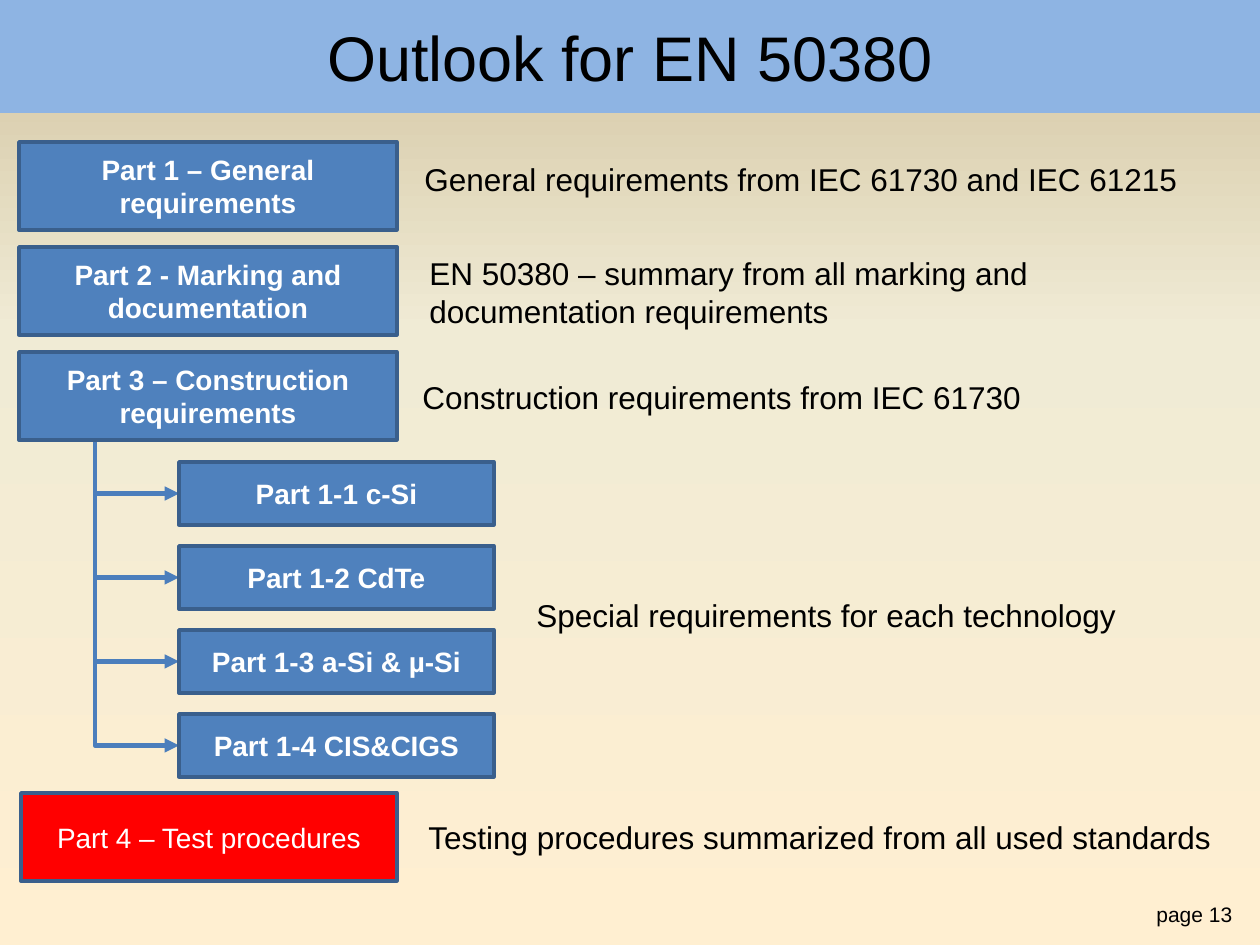
from copy import deepcopy
from dataclasses import dataclass

from lxml.etree import SubElement
from pptx import Presentation
from pptx.dml.color import RGBColor
from pptx.enum.shapes import MSO_CONNECTOR, MSO_SHAPE
from pptx.enum.text import MSO_ANCHOR, MSO_AUTO_SIZE, PP_ALIGN
from pptx.oxml.ns import qn
from pptx.util import Emu, Pt


@dataclass(frozen=True)
class Theme:
    font: str = "Arial"
    text: str = "000000"
    box_text: str = "FFFFFF"
    banner: str = "8EB4E3"
    box_fill: str = "4F81BD"
    test_fill: str = "FF0000"
    outline: str = "3A5F8C"
    branch: str = "4B7EBC"
    background: tuple = ((0, "FFEFD1"), (0.65, "F0EBD5"), (1, "D1C39F"))
    title_size: int = 36
    note_size: int = 18
    box_size: int = 16
    page_size: int = 12


theme = Theme()
PX = 914400 / 126


def px(*lengths):
    return [Emu(round(length * PX)) for length in lengths]


def write(shape, text, size, color, bold=False, align=PP_ALIGN.LEFT,
          anchor=MSO_ANCHOR.TOP, wrap=True, fit=MSO_AUTO_SIZE.NONE):
    """Put one formatted paragraph into a shape."""
    frame = shape.text_frame
    frame.text = text
    for name, value in {"word_wrap": wrap, "auto_size": fit,
                        "vertical_anchor": anchor}.items():
        setattr(frame, name, value)
    paragraph = frame.paragraphs[0]
    paragraph.alignment = align
    font = paragraph.runs[0].font
    for name, value in {"name": theme.font, "size": Pt(size), "bold": bold}.items():
        setattr(font, name, value)
    font.color.rgb = RGBColor.from_string(color)


prs = Presentation()
prs.slide_width, prs.slide_height = px(1260, 945)
slide = prs.slides.add_slide(prs.slide_layouts[5])
shapes = slide.shapes

# Background, running from the bottom up
backdrop = slide.background.fill
backdrop.gradient()
backdrop.gradient_angle = 90
stop_list = next(slide.element.iter(qn("a:gsLst")))
stop_list.append(deepcopy(stop_list[-1]))
for stop, (position, color) in zip(backdrop.gradient_stops, theme.background):
    stop.position = position
    stop.color.rgb = RGBColor.from_string(color)

# Title banner
title = shapes.title
title.left, title.top, title.width, title.height = px(0, 0, 1260, 113)
title.fill.solid()
title.fill.fore_color.rgb = RGBColor.from_string(theme.banner)
write(title, "Outlook for EN 50380", theme.title_size, theme.text,
      align=PP_ALIGN.CENTER, anchor=MSO_ANCHOR.MIDDLE)

# Geometry of the parts and of the technologies below part 3
part_left, part_top, part_width, part_height, part_pitch = 19, 142, 378, 88, 105
tech_left, tech_top, tech_width, tech_height, tech_pitch = 179, 462, 315, 63, 84
trunk_x, trunk_top = 95, 437

technologies = ["Part 1-1 c-Si", "Part 1-2 CdTe", "Part 1-3 a-Si & µ-Si",
                "Part 1-4 CIS&CIGS"]
main_parts = ["Part 1 – General requirements", "Part 2 - Marking and documentation",
              "Part 3 – Construction requirements"]

# Elbow arrows: a quarter turn swaps the drop and the run around their centre
run = tech_left - trunk_x
for row in range(len(technologies)):
    drop = tech_top + row * tech_pitch + tech_height / 2 - trunk_top
    center_x, center_y = trunk_x + run / 2, trunk_top + drop / 2
    branch = shapes.add_connector(
        MSO_CONNECTOR.ELBOW,
        *px(center_x + drop / 2, center_y - run / 2,
            center_x - drop / 2, center_y + run / 2))
    properties = branch._element.spPr
    properties.find(qn("a:xfrm")).set("rot", "16200000")
    properties.find(qn("a:prstGeom")).set("prst", "bentConnector2")
    branch.line.width = Pt(2.75)
    branch.line.color.rgb = RGBColor.from_string(theme.branch)
    SubElement(properties.find(qn("a:ln")), qn("a:tailEnd"), type="triangle")
    SubElement(properties, qn("a:effectLst"))

# Boxes: text, place, fill, bold
boxes = [(text, (part_left, part_top + row * part_pitch, part_width, part_height),
          theme.box_fill, True) for row, text in enumerate(main_parts)]
boxes += [(text, (tech_left, tech_top + row * tech_pitch, tech_width, tech_height),
           theme.box_fill, True) for row, text in enumerate(technologies)]
boxes.append(("Part 4 – Test procedures", (21, 793, 376, part_height),
              theme.test_fill, False))
for text, place, fill, bold in boxes:
    box = shapes.add_shape(MSO_SHAPE.RECTANGLE, *px(*place))
    box.shadow.inherit = False
    box.fill.solid()
    box.fill.fore_color.rgb = RGBColor.from_string(fill)
    box.line.color.rgb = RGBColor.from_string(theme.outline)
    box.line.width = Pt(2)
    write(box, text, theme.box_size, theme.box_text, bold,
          PP_ALIGN.CENTER, MSO_ANCHOR.MIDDLE)

# Notes beside the boxes, and the page number: text, place, size, wrap
notes = [
    ("General requirements from IEC 61730 and IEC 61215",
     (412, 154, 785, 51), theme.note_size, False),
    ("EN 50380 – summary from all marking and documentation requirements",
     (417, 248, 801, 89), theme.note_size, True),
    ("Construction requirements from IEC 61730",
     (410, 372, 630, 51), theme.note_size, False),
    ("Special requirements for each technology",
     (524, 590, 610, 51), theme.note_size, False),
    ("Testing procedures summarized from all used standards",
     (416, 812, 823, 51), theme.note_size, True),
    ("page 13", (1144, 895, 105, 38), theme.page_size, False),
]
for text, place, size, wrap in notes:
    note = shapes.add_textbox(*px(*place))
    write(note, text, size, theme.text, wrap=wrap, fit=MSO_AUTO_SIZE.SHAPE_TO_FIT_TEXT)

prs.save("out.pptx")
